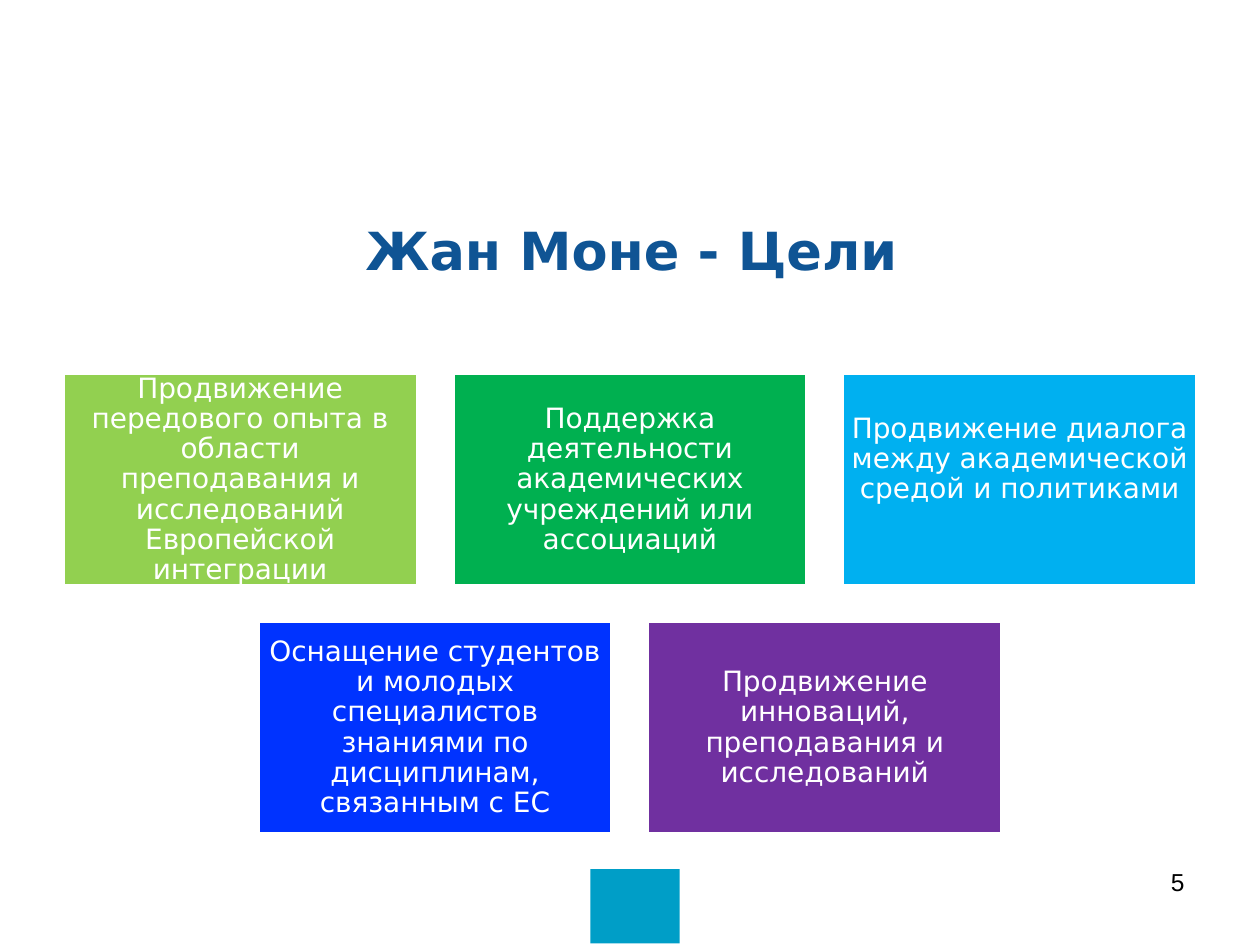
from pptx import Presentation
from pptx.dml.color import RGBColor
from pptx.enum.shapes import MSO_SHAPE
from pptx.enum.text import MSO_ANCHOR, MSO_AUTO_SIZE, PP_ALIGN
from pptx.util import Cm, Pt

COLUMNS = 3
GOALS = [
    ("Продвижение передового опыта в области преподавания и исследований Европейской интеграции", "92D050"),
    ("Поддержка деятельности академических учреждений или ассоциаций", "00B050"),
    ("Продвижение диалога между академической средой и политиками", "00B0F0"),
    ("Оснащение студентов и молодых специалистов знаниями по дисциплинам, связанным с ЕС", "0033FF"),
    ("Продвижение инноваций, преподавания и исследований", "7030A0"),
]
RAISED_GOAL = 2


def color(value):
    return RGBColor.from_string(value)


def place(shape, box):
    shape.left, shape.top, shape.width, shape.height = (Cm(value) for value in box)


def write(shape, text, size, text_color, font_name="DejaVu Sans", bold=False,
          align=PP_ALIGN.CENTER, anchor=MSO_ANCHOR.MIDDLE):
    text_frame = shape.text_frame
    text_frame.text = text
    text_frame.word_wrap = True
    text_frame.auto_size = MSO_AUTO_SIZE.NONE
    text_frame.vertical_anchor = anchor
    paragraph = text_frame.paragraphs[0]
    paragraph.alignment = align
    font = paragraph.runs[0].font
    font.name = font_name
    font.size = Pt(size)
    font.bold = bold
    font.color.rgb = color(text_color)
    return paragraph


def set_margins(shape, margin):
    text_frame = shape.text_frame
    text_frame.margin_left = text_frame.margin_right = Cm(margin)
    text_frame.margin_top = text_frame.margin_bottom = Cm(margin)


def add_rectangle(slide, box, fill):
    shape = slide.shapes.add_shape(MSO_SHAPE.RECTANGLE, *(Cm(value) for value in box))
    shape.shadow.inherit = False
    shape.fill.solid()
    shape.fill.fore_color.rgb = color(fill)
    return shape


def add_footer_block(slide, box):
    block = add_rectangle(slide, box, "009EC7")
    block.line.fill.background()


def add_title(slide, box):
    title = slide.shapes.title
    place(title, box)
    write(title, "Жан Моне - Цели", 30, "0F5494", bold=True)


def add_goals(slide, box):
    left, top, width = box
    card_width = width / (COLUMNS + 0.1 * (COLUMNS - 1))
    card_height = 0.6 * card_width
    gap = 0.1 * card_width
    for index, (text, fill) in enumerate(GOALS):
        row, column = divmod(index, COLUMNS)
        cards_in_row = min(COLUMNS, len(GOALS) - row * COLUMNS)
        row_offset = (COLUMNS - cards_in_row) * (card_width + gap) / 2
        card = add_rectangle(slide, (left + row_offset + column * (card_width + gap),
                                     top + row * (card_height + gap),
                                     card_width, card_height), fill)
        card.line.color.rgb = color("FFFFFF")
        card.line.width = Pt(2)
        set_margins(card, 0.18)
        if index == RAISED_GOAL:
            card.text_frame.margin_bottom = Cm(1)
        write(card, text, 16, "FFFFFF").line_spacing = 0.9


def add_slide_number(slide, box):
    number = slide.shapes.add_textbox(*(Cm(value) for value in box))
    write(number, "5", 14, "000000", font_name="Arial",
          align=PP_ALIGN.RIGHT, anchor=MSO_ANCHOR.TOP)


def main():
    presentation = Presentation()
    presentation.slide_width = Cm(25.4)
    presentation.slide_height = Cm(19.05)
    slide = presentation.slides.add_slide(presentation.slide_layouts[5])
    add_footer_block(slide, (11.9, 17.52, 1.8, 1.5))
    add_title(slide, (1.3, 3.92, 22.86, 2.21))
    add_goals(slide, (1.27, 7.53, 22.86))
    add_slide_number(slide, (18.2, 17.35, 5.93, 1.32))
    presentation.save("out.pptx")


if __name__ == "__main__":
    main()
